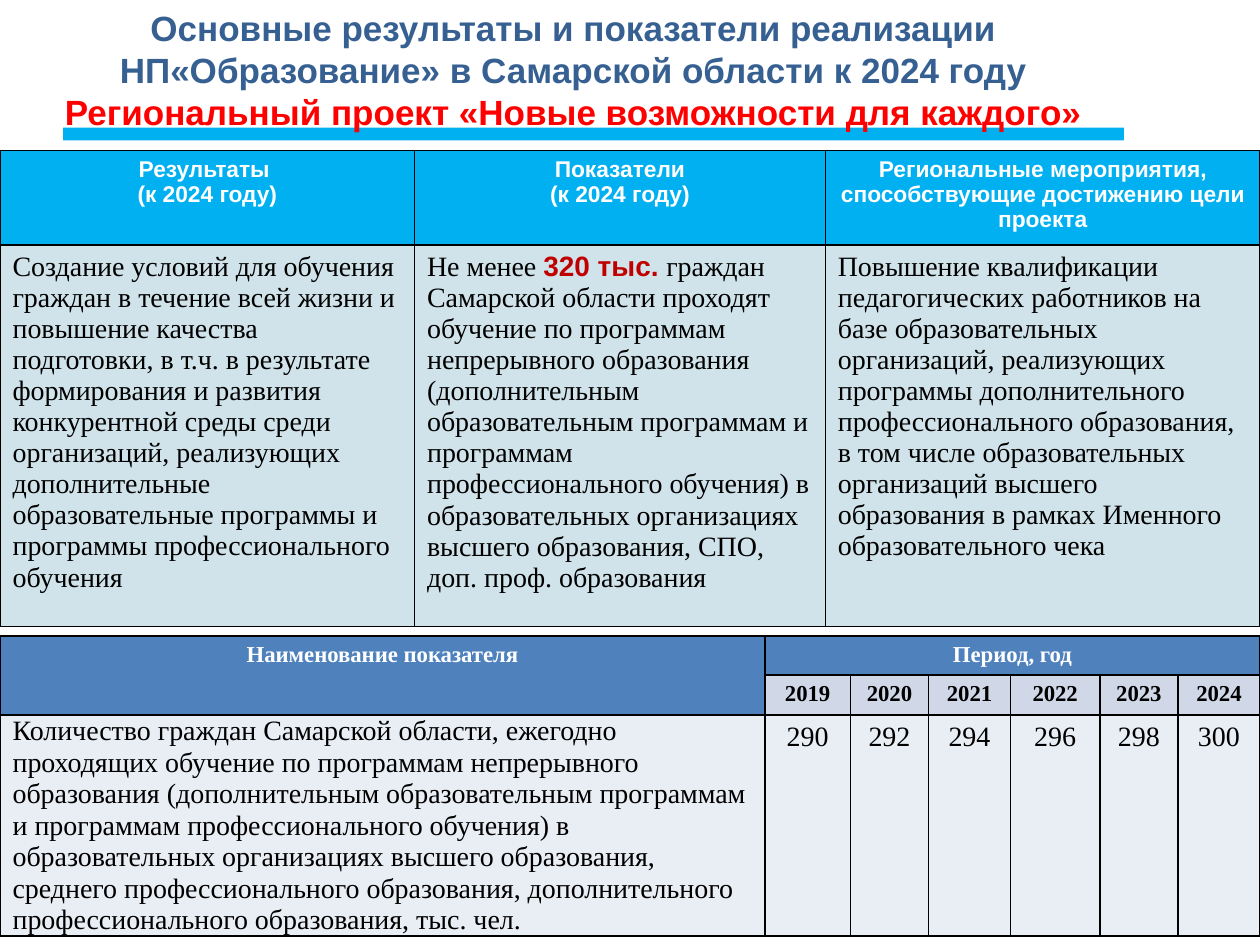
from collections import namedtuple

from pptx import Presentation, util as u
from pptx.dml.color import RGBColor
from pptx.enum import shapes, text
from pptx.oxml import parse_xml
from pptx.oxml.ns import nsdecls

WHITE = RGBColor(0xFF, 0xFF, 0xFF)
BLACK = RGBColor(0x00, 0x00, 0x00)
RED = RGBColor(0xFF, 0x00, 0x00)
DARK_RED = RGBColor(0xC0, 0x00, 0x00)
NAVY = RGBColor(0x37, 0x60, 0x92)
CYAN = RGBColor(0x00, 0xB0, 0xF0)
PALE_CYAN = RGBColor(0xD0, 0xE3, 0xEA)
BLUE = RGBColor(0x4F, 0x81, 0xBD)
PALE_BLUE = RGBColor(0xD0, 0xD8, 0xE8)
LIGHT = RGBColor(0xE9, 0xED, 0xF4)
SANS, SERIF = "Arial", "Times New Roman"
WIDTH, HEIGHT = u.Inches(10), u.Inches(7.5)
CENTER, LEFT = text.PP_ALIGN.CENTER, text.PP_ALIGN.LEFT

Box = namedtuple("Box", "left top width height")
Style = namedtuple("Style", "font size color bold")

TITLE = Style(SANS, 20, NAVY, True)
SANS_HEAD = Style(SANS, 13, WHITE, True)
SERIF_HEAD = Style(SERIF, 13, WHITE, True)
YEAR = SERIF_HEAD._replace(color=BLACK)
BODY = Style(SERIF, 16, BLACK, False)
ACCENT = Style(SANS, 16, DARK_RED, True)

GOALS_HEAD = [
    ["Результаты ", "(к 2024 году)"],
    ["Показатели", "(к 2024 году)"],
    ["Региональные мероприятия, способствующие достижению цели проекта"],
]
GOALS_BODY = [
    [("Создание условий для обучения граждан в течение всей жизни и повышение "
      "качества подготовки, в т.ч. в результате формирования и развития "
      "конкурентной среды среди организаций, реализующих дополнительные "
      "образовательные программы и программы профессионального обучения", BODY)],
    [("Не менее ", BODY), ("320 тыс. ", ACCENT),
     ("граждан Самарской области проходят обучение по программам непрерывного "
      "образования (дополнительным образовательным программам и программам "
      "профессионального обучения) в образовательных организациях высшего "
      "образования, СПО, доп. проф. образования", BODY)],
    [("Повышение квалификации педагогических работников на базе образовательных "
      "организаций, реализующих программы дополнительного профессионального "
      "образования, в том числе образовательных организаций высшего образования "
      "в рамках Именного образовательного чека", BODY)],
]
INDICATOR = (
    "Количество граждан Самарской области, ежегодно проходящих обучение по "
    "программам непрерывного образования (дополнительным образовательным "
    "программам и программам профессионального обучения) в образовательных "
    "организациях высшего образования, среднего профессионального образования, "
    "дополнительного профессионального образования, тыс. чел.")
VALUES = {2019: 290, 2020: 292, 2021: 294, 2022: 296, 2023: 298, 2024: 300}


def share(left, top, width, height):
    return Box(*(int(part * side) for part, side in
                 zip((left, top, width, height), (WIDTH, HEIGHT) * 2)))


def write(frame, paragraphs, alignment=CENTER):
    for index, runs in enumerate(paragraphs):
        paragraph = frame.paragraphs[0] if index == 0 else frame.add_paragraph()
        paragraph.alignment = alignment
        for words, style in runs:
            run = paragraph.add_run()
            run.text = words
            run.font.name = style.font
            run.font.size = u.Pt(style.size)
            run.font.bold = style.bold
            run.font.color.rgb = style.color


def format_cell(cell, fill):
    properties = cell._tc.get_or_add_tcPr()
    for side in ("lnL", "lnR", "lnT", "lnB"):
        properties.append(parse_xml(
            f'<a:{side} {nsdecls("a")} w="12700"><a:solidFill>'
            f'<a:srgbClr val="{BLACK}"/></a:solidFill></a:{side}>'))
    cell.fill.solid()
    cell.fill.fore_color.rgb = fill


def add_grid(slide, box, columns, rows, fill_for):
    frame = slide.shapes.add_table(len(rows), len(columns), *box)
    table = frame.table
    for column, weight in zip(table.columns, columns):
        column.width = int(box.width * weight / sum(columns))
    for row, weight in zip(table.rows, rows):
        row.height = int(box.height * weight / sum(rows))
    for i in range(len(rows)):
        for j in range(len(columns)):
            format_cell(table.cell(i, j), fill_for(i, j))
    return table


def place_heading(slide, box, bar_box):
    title = slide.shapes.title
    title.left, title.top, title.width, title.height = box
    frame = title.text_frame
    frame.word_wrap = True
    frame.auto_size = text.MSO_AUTO_SIZE.NONE
    frame.vertical_anchor = text.MSO_ANCHOR.TOP
    write(frame, [
        [("Основные результаты и показатели реализации НП«Образование» "
          "в Самарской области к 2024 году", TITLE)],
        [("Региональный проект «Новые возможности для каждого»",
          TITLE._replace(color=RED))],
    ])
    for paragraph in frame.paragraphs:
        paragraph.line_spacing = u.Pt(24)
        paragraph.space_before = u.Pt(0)

    bar = slide.shapes.add_shape(shapes.MSO_SHAPE.RECTANGLE, *bar_box)
    bar.shadow.inherit = False
    bar.fill.solid()
    bar.fill.fore_color.rgb = CYAN
    bar.line.fill.background()
    title.element.addprevious(bar.element)


def place_goals(slide, box):
    table = add_grid(slide, box, [3.29, 3.26, 3.45], [0.75, 3.03],
                     lambda i, j: PALE_CYAN if i else CYAN)
    for j, (lines, runs) in enumerate(zip(GOALS_HEAD, GOALS_BODY)):
        write(table.cell(0, j).text_frame, [[(line, SANS_HEAD)] for line in lines])
        write(table.cell(1, j).text_frame, [runs], LEFT)


def place_indicators(slide, box):
    fills = [BLUE, PALE_BLUE, LIGHT]
    table = add_grid(slide, box, [6.07, 0.68, 0.62, 0.65, 0.71, 0.62, 0.65],
                     [0.31, 0.32, 1.75],
                     lambda i, j: BLUE if i == 1 and j == 0 else fills[i])
    table.cell(0, 0).merge(table.cell(1, 0))
    table.cell(0, 1).merge(table.cell(0, len(VALUES)))
    write(table.cell(0, 0).text_frame, [[("Наименование показателя", SERIF_HEAD)]])
    write(table.cell(0, 1).text_frame, [[("Период, год", SERIF_HEAD)]])
    for j, (year, value) in enumerate(VALUES.items(), 1):
        write(table.cell(1, j).text_frame, [[(str(year), YEAR)]])
        write(table.cell(2, j).text_frame, [[(str(value), BODY)]])

    name = table.cell(2, 0)
    name.vertical_anchor = text.MSO_ANCHOR.MIDDLE
    name.margin_left, name.margin_right = u.Inches(0.1), u.Inches(0.02)
    name.margin_top = name.margin_bottom = 0
    write(name.text_frame, [[(INDICATOR, BODY)]], LEFT)
    name.text_frame.paragraphs[0].line_spacing = u.Pt(18)


def main():
    presentation = Presentation()
    presentation.slide_width, presentation.slide_height = WIDTH, HEIGHT
    slide = presentation.slides.add_slide(presentation.slide_layouts[5])
    place_heading(slide, share(0, 0, 0.91, 0.14), share(0.05, 0.135, 0.842, 0.0135))
    place_goals(slide, share(0, 0.159, 1, 0.504))
    place_indicators(slide, share(0, 0.673, 1, 0.317))
    presentation.save("out.pptx")


if __name__ == "__main__":
    main()
